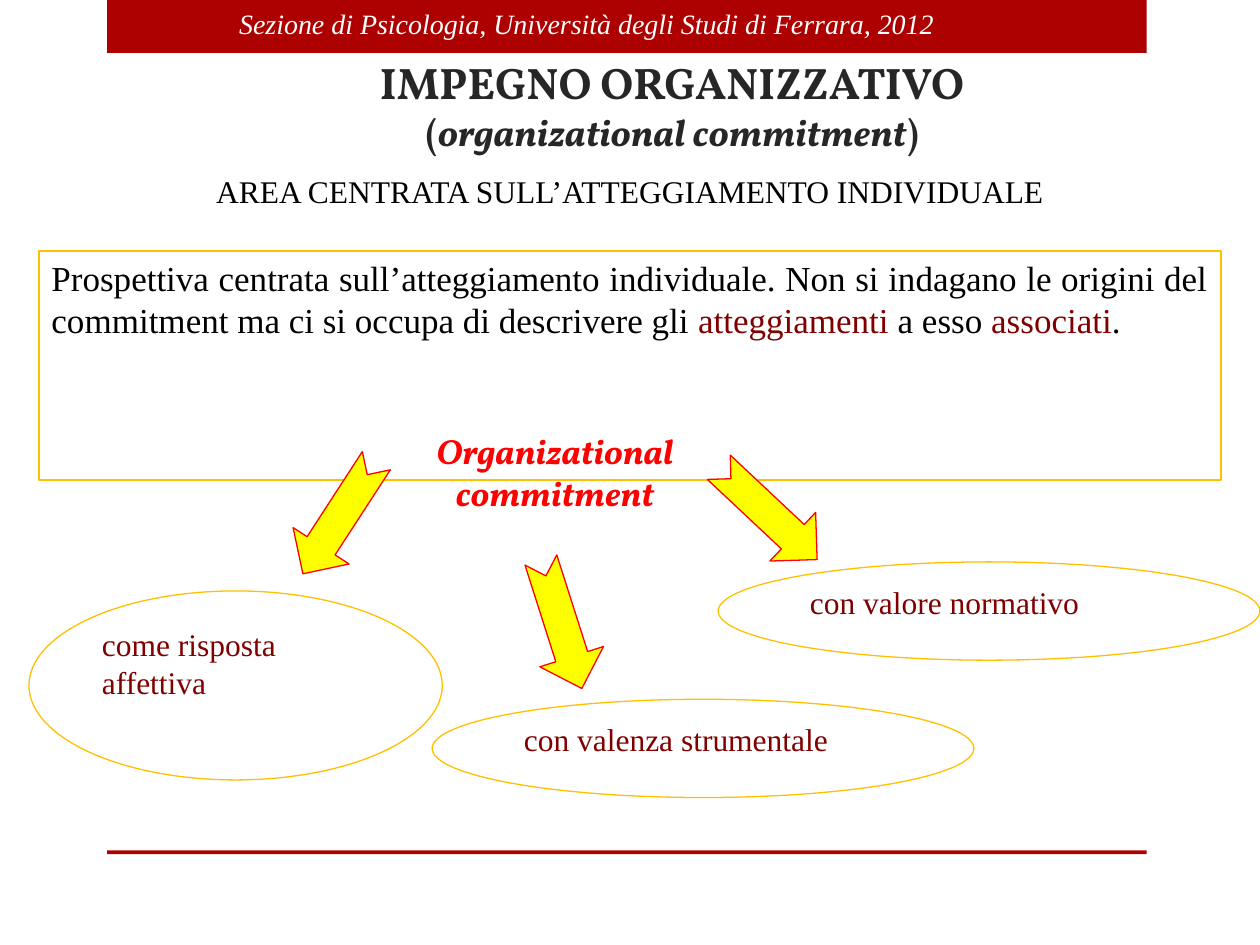
from pptx import Presentation
from pptx.dml.color import RGBColor
from pptx.enum.shapes import MSO_SHAPE
from pptx.enum.text import MSO_ANCHOR, PP_ALIGN
from pptx.util import Inches, Pt

COLORS = {
    "band": "AD0101", "white": "FFFFFF", "title": "262626", "black": "000000",
    "maroon": "800000", "gold": "FFC000", "yellow": "FFFF00", "red": "FF0000",
}
SERIF, DISPLAY = "Times New Roman", "Vollkorn"


def color(name):
    return RGBColor.from_string(COLORS[name])


class Deck:
    def __init__(self, width, height):
        self.prs = Presentation()
        self.prs.slide_width, self.prs.slide_height = Inches(width), Inches(height)
        self.slide = self.prs.slides.add_slide(self.prs.slide_layouts[6])

    def shape(self, kind, box, fill=None, line=None, width=0.75, turn=0):
        item = self.slide.shapes.add_shape(kind, *map(Inches, box))
        item.shadow.inherit = False
        item.rotation = turn
        for part, name in ((item.fill, fill), (item.line.fill, line)):
            if name:
                part.solid()
                part.fore_color.rgb = color(name)
            else:
                part.background()
        if line:
            item.line.width = Pt(width)
        return item

    def label(self, item, lines, align=PP_ALIGN.LEFT, anchor=MSO_ANCHOR.TOP, **base):
        """Each line is a list of (text, format changes) runs."""
        frame = item.text_frame
        frame.word_wrap = True
        frame.vertical_anchor = anchor
        for i, runs in enumerate(lines):
            para = frame.add_paragraph() if i else frame.paragraphs[0]
            para.alignment = align
            for text, change in runs:
                run = para.add_run()
                run.text = text
                style = {"name": SERIF, "size": 18, "tint": "black", **base, **change}
                run.font.color.rgb = color(style.pop("tint"))
                style["size"] = Pt(style["size"])
                for key, value in style.items():
                    setattr(run.font, key, value)

    def text(self, box, lines, **style):
        self.label(self.slide.shapes.add_textbox(*map(Inches, box)), lines, **style)

    def oval(self, box, words):
        item = self.shape(MSO_SHAPE.OVAL, box, line="gold")
        self.label(item, [[(words, {})]], tint="maroon")

    def arrow(self, left, top, turn):
        self.shape(MSO_SHAPE.NOTCHED_RIGHT_ARROW, (left, top, 1.07, 0.53),
                   "yellow", "red", turn=turn)


def main():
    deck = Deck(10, 7.5)

    # Header band and footer rule
    for top, height in ((0, 0.42), (6.75, 0.03)):
        deck.shape(MSO_SHAPE.RECTANGLE, (0.85, top, 8.25, height), "band")
    deck.text((1.8, 0, 5.86, 0.37),
              [[("Sezione di Psicologia, Università degli Studi di Ferrara, 2012", {})]],
              size=16, tint="white", italic=True)

    # Title and subtitle
    deck.text((0.83, 0.57, 9.01, 0.7),
              [[("IMPEGNO ORGANIZZATIVO", {"size": 25.2})],
               [("(", {}), ("organizational commitment", {"italic": True}), (")", {})]],
              align=PP_ALIGN.CENTER, anchor=MSO_ANCHOR.BOTTOM,
              name=DISPLAY, size=21.6, tint="title", bold=True)
    deck.text((0, 1.32, 10, 0.4),
              [[("AREA CENTRATA SULL’ATTEGGIAMENTO INDIVIDUALE", {})]],
              align=PP_ALIGN.CENTER)

    # Framed description
    accent = {"tint": "maroon"}
    frame = deck.shape(MSO_SHAPE.RECTANGLE, (0.31, 1.99, 9.38, 1.82), line="gold", width=1)
    deck.label(frame, [[
        ("Prospettiva centrata sull’atteggiamento individuale. Non si indagano le origini "
         "del commitment ma ci si occupa di descrivere gli ", {}),
        ("atteggiamenti", accent), (" a esso ", {}), ("associati", accent), (".", {}),
    ]], align=PP_ALIGN.JUSTIFY, size=20)

    # Three forms of commitment
    deck.oval((0.23, 4.69, 3.28, 1.5), "come risposta affettiva")
    deck.oval((3.43, 5.55, 4.3, 0.78), "con valenza strumentale")
    deck.oval((5.7, 4.46, 4.3, 0.78), "con valore normativo")

    # Arrows from the central concept
    for left, top, turn in ((2.16, 3.84, 123), (3.92, 4.69, 72.3), (5.56, 3.81, 43.2)):
        deck.arrow(left, top, turn)
    deck.text((3.27, 3.36, 2.27, 1.18), [[("Organizational commitment", {})]],
              align=PP_ALIGN.CENTER, name=DISPLAY, size=20, tint="red",
              bold=True, italic=True)

    deck.prs.save("out.pptx")


if __name__ == "__main__":
    main()
